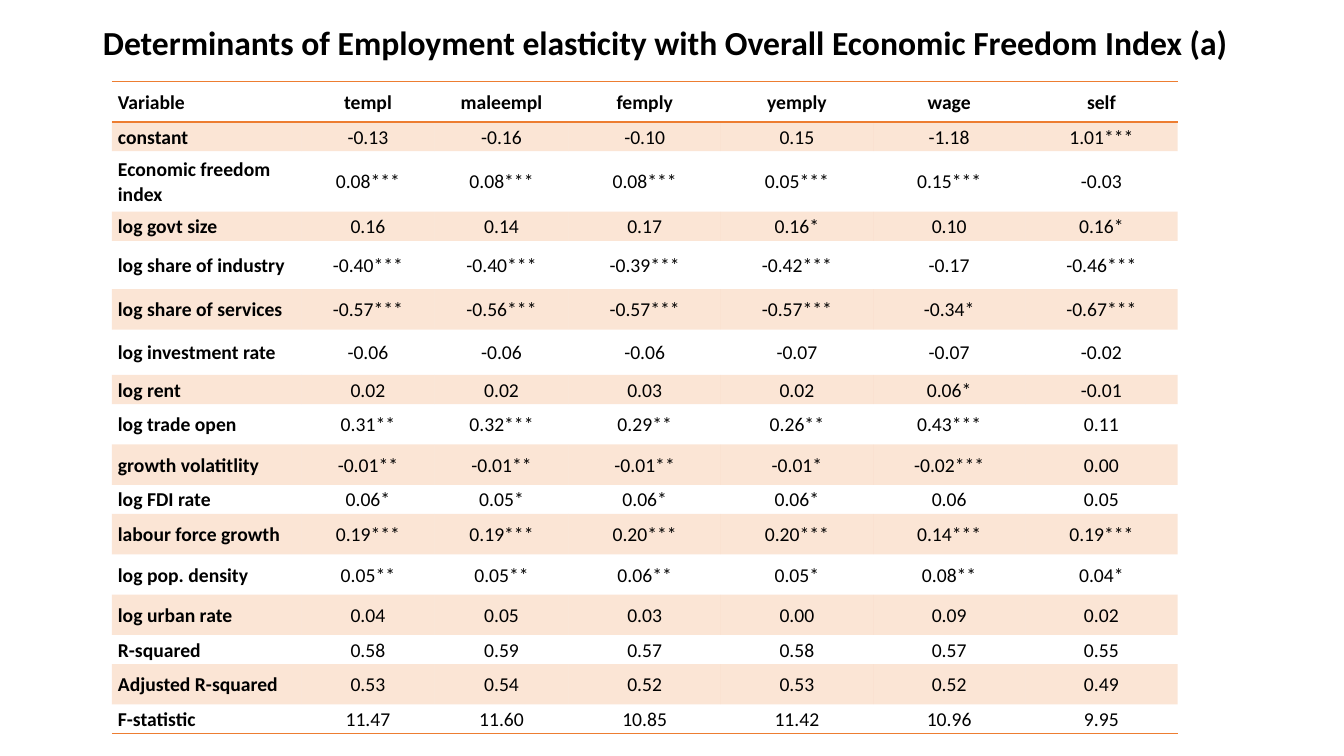
from lxml import etree
from pptx import Presentation
from pptx.dml.color import RGBColor
from pptx.enum.text import MSO_ANCHOR as Anchor, MSO_AUTO_SIZE as Fit, PP_ALIGN as Align
from pptx.oxml.ns import qn
from pptx.util import Inches, Pt

ORANGE = "ED7D31"
BLACK = "000000"


def style(par, size, bold, spacing, align):
    par.line_spacing = spacing
    par.alignment = align
    for run in par.runs:
        run.font.name = "Calibri"
        run.font.size = Pt(size)
        run.font.bold = bold
        run.font.color.rgb = RGBColor.from_string(BLACK)


def border(cell, tags):
    """Draw 1 pt orange edges, given as tags in schema order (lnT, lnB)."""
    props = cell._tc.get_or_add_tcPr()
    for i, tag in enumerate(tags):
        line = etree.Element(qn(f"a:{tag}"), w=str(Pt(1)))
        fill = etree.SubElement(line, qn("a:solidFill"))
        etree.SubElement(fill, qn("a:srgbClr"), val=ORANGE)
        props.insert(i, line)


prs = Presentation()
prs.slide_width = Inches(13.33)
prs.slide_height = Inches(7.5)
slide = prs.slides.add_slide(prs.slide_layouts[5])

title = slide.shapes.title
title.left, title.top = Inches(0.92), Inches(0.21)
title.width, title.height = Inches(11.5), Inches(0.46)
frame = title.text_frame
frame.text = "Determinants of Employment elasticity with Overall Economic Freedom Index (a)"
frame.auto_size = Fit.NONE
frame.vertical_anchor = Anchor.MIDDLE
style(frame.paragraphs[0], 24, True, 0.9, Align.LEFT)

# Row height, label, values
rows = [
    (0.4, "Variable", "templ maleempl femply yemply wage self"),
    (0.29, "constant", "-0.13 -0.16 -0.10 0.15 -1.18 1.01***"),
    (0.6, "Economic freedom index", "0.08*** 0.08*** 0.08*** 0.05*** 0.15*** -0.03"),
    (0.29, "log govt size", "0.16 0.14 0.17 0.16* 0.10 0.16*"),
    (0.48, "log share of industry", "-0.40*** -0.40*** -0.39*** -0.42*** -0.17 -0.46***"),
    (0.4, "log share of services", "-0.57*** -0.56*** -0.57*** -0.57*** -0.34* -0.67***"),
    (0.45, "log investment rate", "-0.06 -0.06 -0.06 -0.07 -0.07 -0.02"),
    (0.29, "log rent", "0.02 0.02 0.03 0.02 0.06* -0.01"),
    (0.4, "log trade open", "0.31** 0.32*** 0.29** 0.26** 0.43*** 0.11"),
    (0.4, "growth volatitlity", "-0.01** -0.01** -0.01** -0.01* -0.02*** 0.00"),
    (0.29, "log FDI rate", "0.06* 0.05* 0.06* 0.06* 0.06 0.05"),
    (0.4, "labour force growth", "0.19*** 0.19*** 0.20*** 0.20*** 0.14*** 0.19***"),
    (0.4, "log pop. density", "0.05** 0.05** 0.06** 0.05* 0.08** 0.04*"),
    (0.4, "log urban rate", "0.04 0.05 0.03 0.00 0.09 0.02"),
    (0.29, "R-squared", "0.58 0.59 0.57 0.58 0.57 0.55"),
    (0.4, "Adjusted R-squared", "0.53 0.54 0.52 0.53 0.52 0.49"),
    (0.29, "F-statistic", "11.47 11.60 10.85 11.42 10.96 9.95"),
]
widths = [1.88, 1.32, 1.33] + [1.51] * 4
edges = {0: ["lnT", "lnB"], len(rows) - 1: ["lnB"]}

holder = slide.shapes.add_table(
    len(rows), len(widths), Inches(1.11), Inches(0.81), Inches(10.6), Inches(6.47))
table = holder.table
# Built-in style "No Style, No Grid"
table._tbl.tblPr.find(qn("a:tableStyleId")).text = "{2D5ABB26-0587-4C30-8999-92F81FD0307C}"
for col, width in zip(table.columns, widths):
    col.width = Inches(width)

for r, (height, label, values) in enumerate(rows):
    table.rows[r].height = Inches(height)
    for c, text in enumerate([label] + values.split()):
        cell = table.cell(r, c)
        cell.text_frame.text = text
        cell.vertical_anchor = Anchor.MIDDLE
        cell.margin_left = cell.margin_right = Inches(0.06)
        cell.margin_top = cell.margin_bottom = 0
        style(cell.text_frame.paragraphs[0], 14, r == 0 or c == 0, 1.07,
              Align.CENTER if c else Align.LEFT)
        if r % 2:
            cell.fill.solid()
            cell.fill.fore_color.rgb = RGBColor.from_string(ORANGE)
            tint = cell._tc.tcPr.find(".//" + qn("a:srgbClr"))
            etree.SubElement(tint, qn("a:alpha"), val="20000")
        else:
            cell.fill.background()
        border(cell, edges.get(r, []))

prs.save("out.pptx")
